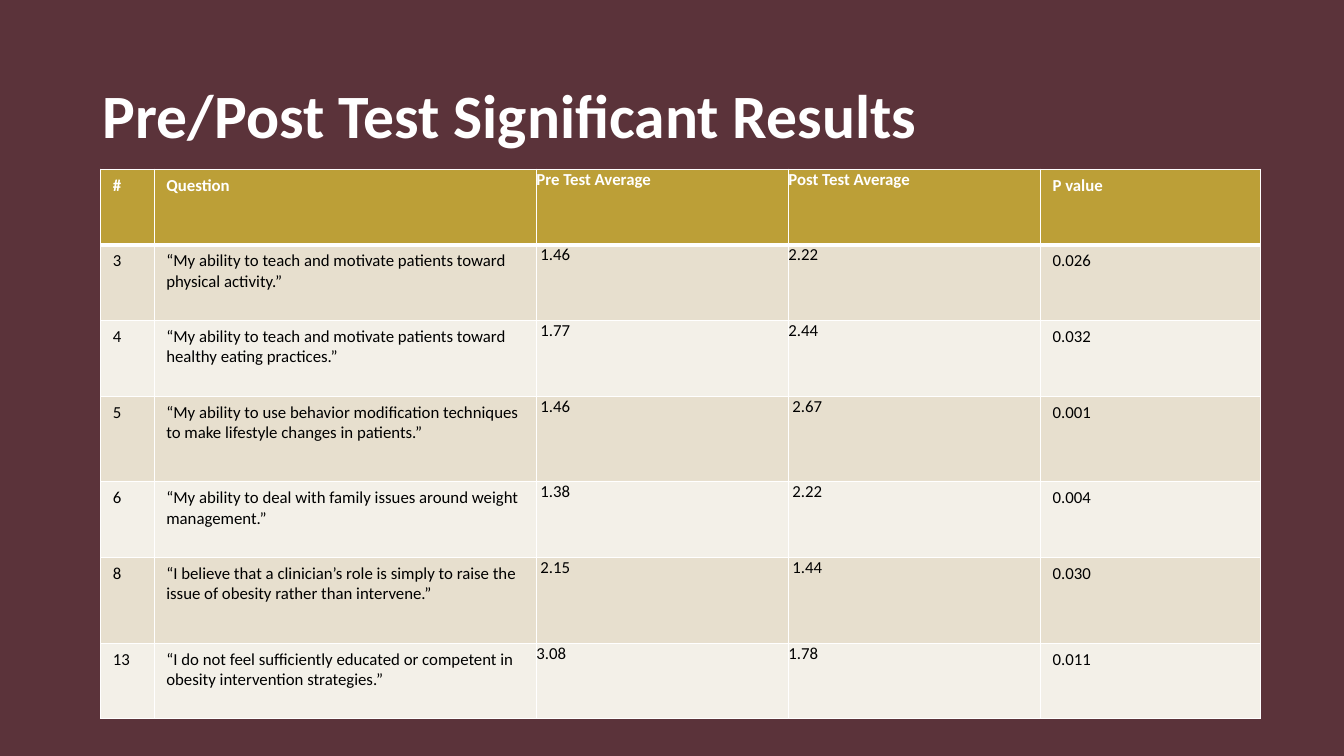
from dataclasses import dataclass

from lxml.etree import SubElement
from pptx import Presentation
from pptx.dml.color import RGBColor
from pptx.enum.text import MSO_ANCHOR, MSO_AUTO_SIZE, PP_ALIGN
from pptx.oxml.ns import qn
from pptx.slide import Slide
from pptx.table import _Cell as Cell
from pptx.text.text import TextFrame
from pptx.util import Emu, Pt

PX = 9144  # EMU in one px, at 100 px to the inch


@dataclass(frozen=True)
class Theme:
    font: str = "Calibri"
    title_size: int = 44
    cell_size: int = 12
    backdrop: str = "5B333A"
    light: str = "FFFFFF"
    dark: str = "000000"
    header: str = "BC9F37"
    bands: tuple[str, str] = ("E7DFCE", "F3F0E8")
    thin: int = 1
    thick: int = 3


@dataclass(frozen=True)
class Column:
    heading: str
    width: int
    inset_x: int = 12
    inset_y: int = 6


@dataclass(frozen=True)
class Result:
    number: str
    question: str
    pre: str
    post: str
    p_value: str
    height: int = 75
    pre_indent: int = 4
    post_indent: int = 0

    def texts(self) -> tuple[str, ...]:
        return self.number, self.question, self.pre, self.post, self.p_value

    def indents(self) -> tuple[int, ...]:
        return 0, 0, self.pre_indent, self.post_indent, 0


THEME = Theme()
HEADER_HEIGHT = 75
COLUMNS = [
    Column("#", 53),
    Column("Question", 379),
    Column("Pre Test Average", 250, 0, 0),
    Column("Post Test Average", 250, 0, 0),
    Column("P value", 218),
]
RESULTS = [
    Result("3", "“My ability to teach and motivate patients toward physical activity.”",
           "1.46", "2.22", "0.026"),
    Result("4", "“My ability to teach and motivate patients toward healthy eating practices.”",
           "1.77", "2.44", "0.032"),
    Result("5", "“My ability to use behavior modification techniques to make lifestyle "
           "changes in patients.”", "1.46", "2.67", "0.001", height=85, post_indent=4),
    Result("6", "“My ability to deal with family issues around weight management.”",
           "1.38", "2.22", "0.004", post_indent=4),
    Result("8", "“I believe that a clinician’s role is simply to raise the issue of obesity "
           "rather than intervene.”", "2.15", "1.44", "0.030", height=85, post_indent=4),
    Result("13", "“I do not feel sufficiently educated or competent in obesity intervention "
           "strategies.”", "3.08", "1.78", "0.011", pre_indent=0),
]


def px(length: int) -> Emu:
    return Emu(length * PX)


def write(frame: TextFrame, text: str, *, size: int, color: str, bold: bool = False) -> None:
    frame.text = text
    paragraph = frame.paragraphs[0]
    paragraph.alignment = PP_ALIGN.LEFT
    font = paragraph.runs[0].font
    font.name, font.size, font.bold = THEME.font, Pt(size), bold
    font.color.rgb = RGBColor.from_string(color)


def add_borders(cell: Cell, *, top: int, bottom: int) -> None:
    properties = cell._tc.get_or_add_tcPr()
    widths = {"a:lnL": THEME.thin, "a:lnR": THEME.thin, "a:lnT": top, "a:lnB": bottom}
    for tag, width in widths.items():
        line = SubElement(properties, qn(tag), w=str(Pt(width)))
        fill = SubElement(line, qn("a:solidFill"))
        SubElement(fill, qn("a:srgbClr"), val=THEME.light)


def format_cell(cell: Cell, column: Column, row: int, indent: int = 0) -> None:
    """Set the insets, borders and fill that follow from the cell's place."""
    cell.margin_left = px(column.inset_x + indent)
    cell.margin_right = px(column.inset_x)
    cell.margin_top = cell.margin_bottom = px(column.inset_y)
    cell.vertical_anchor = MSO_ANCHOR.TOP
    add_borders(cell, top=THEME.thick if row == 1 else THEME.thin,
                bottom=THEME.thick if row == 0 else THEME.thin)
    cell.fill.solid()
    color = THEME.header if row == 0 else THEME.bands[(row - 1) % 2]
    cell.fill.fore_color.rgb = RGBColor.from_string(color)


def add_title(slide: Slide) -> None:
    title = slide.shapes.title
    title.left, title.top, title.width, title.height = map(px, (92, 40, 1150, 145))
    frame = title.text_frame
    frame.auto_size = MSO_AUTO_SIZE.NONE
    frame.vertical_anchor = MSO_ANCHOR.MIDDLE
    write(frame, "Pre/Post Test Significant Results",
          size=THEME.title_size, color=THEME.light, bold=True)


def add_results(slide: Slide) -> None:
    heights = [HEADER_HEIGHT, *(result.height for result in RESULTS)]
    width = sum(column.width for column in COLUMNS)
    table = slide.shapes.add_table(len(heights), len(COLUMNS), px(100), px(168),
                                   px(width), px(sum(heights))).table
    for row, height in zip(table.rows, heights):
        row.height = px(height)
    for c, column in enumerate(COLUMNS):
        table.columns[c].width = px(column.width)
        heading = table.cell(0, c)
        format_cell(heading, column, 0)
        write(heading.text_frame, column.heading,
              size=THEME.cell_size, color=THEME.light, bold=True)
        for r, result in enumerate(RESULTS, start=1):
            cell = table.cell(r, c)
            format_cell(cell, column, r, result.indents()[c])
            write(cell.text_frame, result.texts()[c], size=THEME.cell_size, color=THEME.dark)


def main() -> None:
    deck = Presentation()
    deck.slide_width, deck.slide_height = px(1333), px(750)
    slide = deck.slides.add_slide(deck.slide_layouts.get_by_name("Title Only"))
    backdrop = slide.background.fill
    backdrop.solid()
    backdrop.fore_color.rgb = RGBColor.from_string(THEME.backdrop)
    add_title(slide)
    add_results(slide)
    deck.save("out.pptx")


if __name__ == "__main__":
    main()
